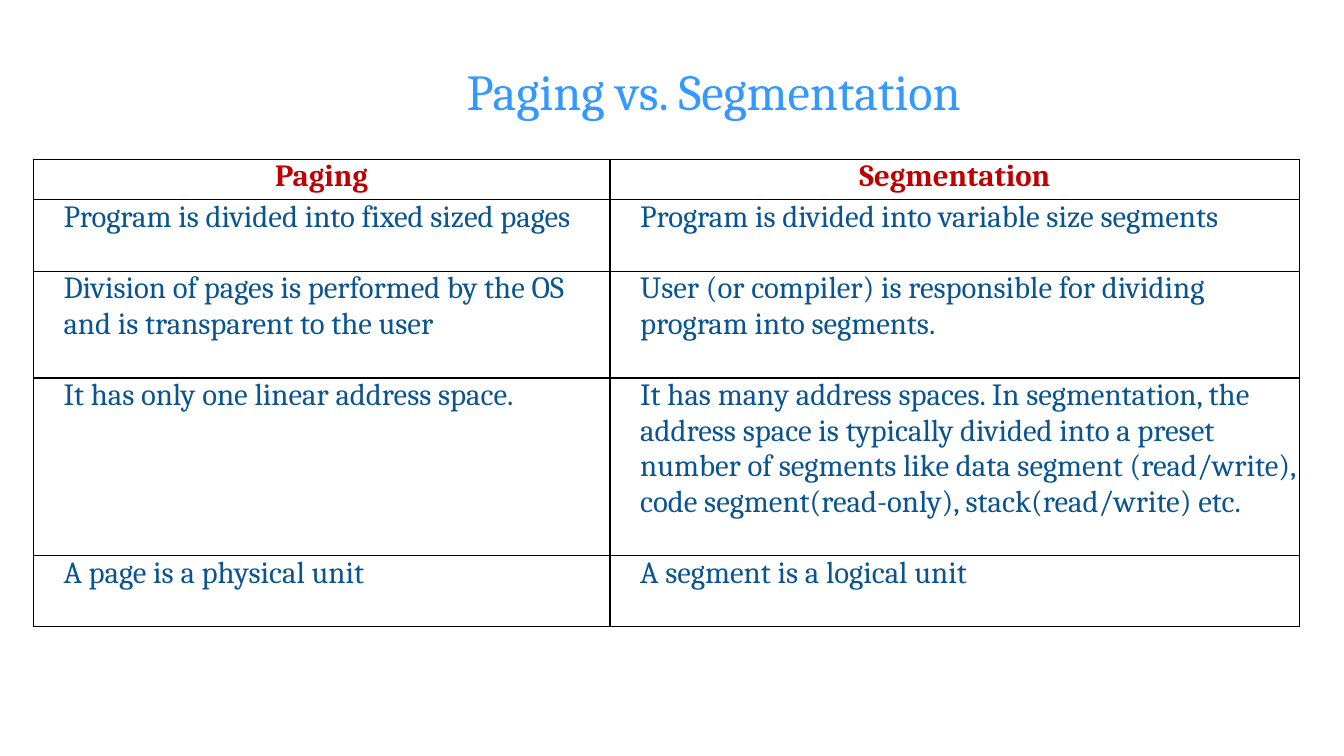
from lxml.etree import fromstring
from pptx import Presentation
from pptx.dml.color import RGBColor
from pptx.enum.text import MSO_ANCHOR, PP_ALIGN
from pptx.oxml.ns import nsdecls
from pptx.util import Inches, Pt

FONT = "Cambria"
COLORS = {"title": "3399FF", "header": "C00000", "body": "0A5492", "border": "000000"}

COMPARISON = [
    ("Paging", "Segmentation"),
    ("Program is divided into fixed sized pages",
     "Program is divided into variable size segments"),
    ("Division of pages is performed by the OS and is transparent to the user",
     "User (or compiler) is responsible for dividing program into segments."),
    ("It has only one linear address space.",
     "It has many address spaces. In segmentation, the address space is typically "
     "divided into a preset number of segments like data segment (read/write), "
     "code segment(read-only), stack(read/write) etc."),
    ("A page is a physical unit", "A segment is a logical unit"),
]
COLUMN_WIDTHS = [5.72, 6.84]
ROW_HEIGHTS = [0.4, 0.71, 1.06, 1.76, 0.71]


def add_run(paragraph, text, size, color, bold=False):
    run = paragraph.add_run()
    run.text = text
    run.font.name = FONT
    run.font.size = Pt(size)
    run.font.bold = bold
    run.font.color.rgb = RGBColor.from_string(COLORS[color])


def add_borders(cell):
    properties = cell._tc.get_or_add_tcPr()
    for position, side in enumerate(("lnL", "lnR", "lnT", "lnB")):
        properties.insert(position, fromstring(
            f'<a:{side} {nsdecls("a")} w="{Pt(1)}"><a:solidFill>'
            f'<a:srgbClr val="{COLORS["border"]}"/></a:solidFill></a:{side}>'))


prs = Presentation()
prs.slide_width = Inches(13.33)
prs.slide_height = Inches(7.5)
slide = prs.slides.add_slide(prs.slide_layouts[5])

title = slide.shapes.title
title.left, title.top = Inches(1.83), Inches(0)
title.width, title.height = Inches(10.5), Inches(1.25)
title.text_frame.vertical_anchor = MSO_ANCHOR.BOTTOM
heading = title.text_frame.paragraphs[0]
heading.alignment = PP_ALIGN.CENTER
heading.line_spacing = 0.9
add_run(heading, "Paging vs. Segmentation", 36, "title")

table = slide.shapes.add_table(
    len(COMPARISON), len(COLUMN_WIDTHS), Inches(0.33), Inches(1.58),
    Inches(sum(COLUMN_WIDTHS)), Inches(sum(ROW_HEIGHTS))).table
table.horz_banding = False
for column, width in zip(table.columns, COLUMN_WIDTHS):
    column.width = Inches(width)
for row, height in zip(table.rows, ROW_HEIGHTS):
    row.height = Inches(height)

for row_index, statements in enumerate(COMPARISON):
    for column_index, statement in enumerate(statements):
        cell = table.cell(row_index, column_index)
        cell.margin_left = cell.margin_right = Inches(0)
        cell.margin_top = cell.margin_bottom = Inches(0)
        cell.fill.background()
        add_borders(cell)
        paragraph = cell.text_frame.paragraphs[0]
        if row_index == 0:
            paragraph.alignment = PP_ALIGN.CENTER
            add_run(paragraph, statement, 22, "header", bold=True)
        else:
            paragraph._p.get_or_add_pPr().set("marL", str(Inches(0.3)))
            add_run(paragraph, statement, 22, "body")

prs.save("out.pptx")
